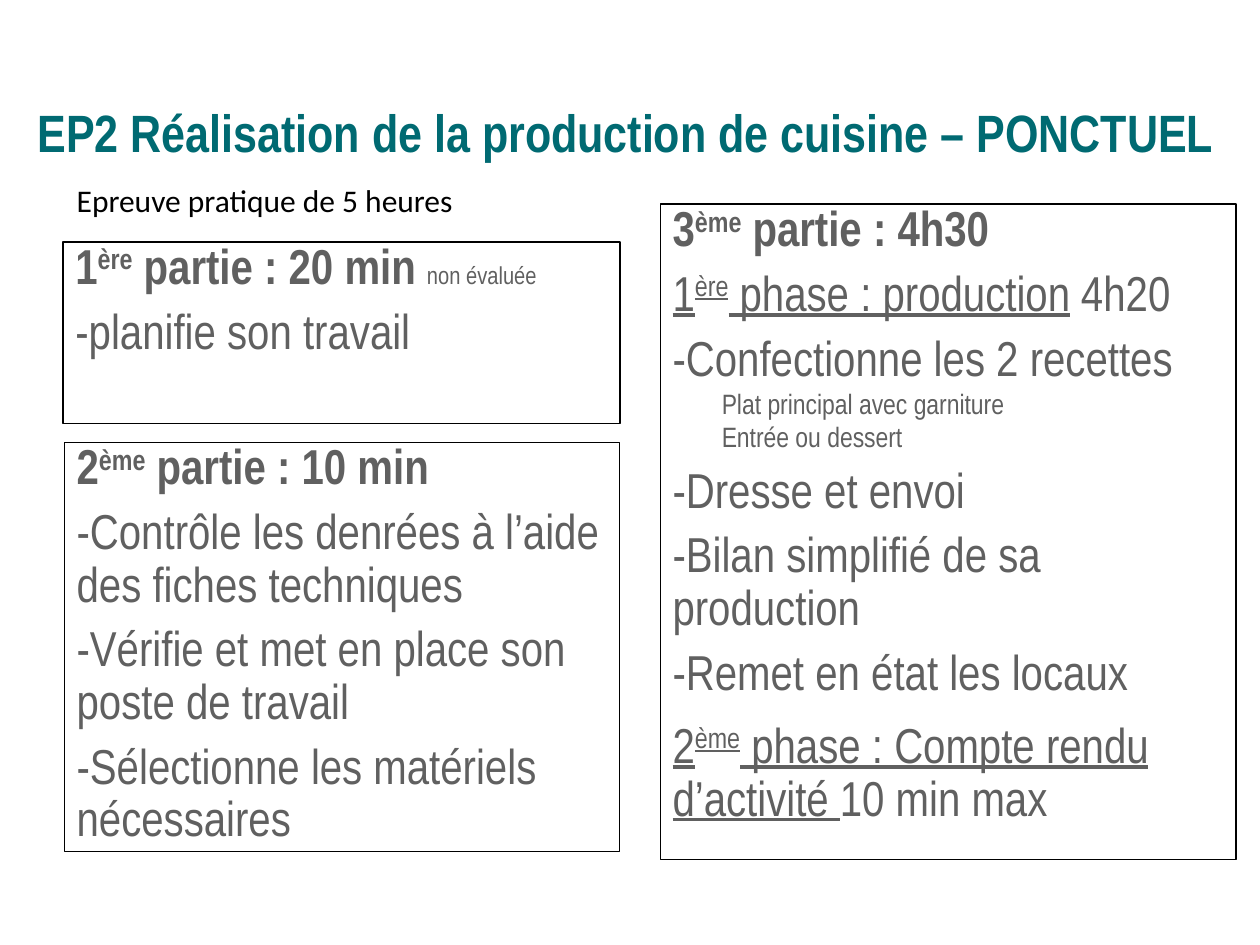
from pptx import Presentation
from pptx.dml.color import RGBColor
from pptx.enum.shapes import MSO_SHAPE
from pptx.enum.text import MSO_ANCHOR, PP_ALIGN
from pptx.util import Inches, Pt

THEME = {
    "heading": RGBColor(0x00, 0x6A, 0x72),
    "body": RGBColor(0x60, 0x60, 0x60),
    "black": RGBColor(0x00, 0x00, 0x00),
    "narrow": "Arial Narrow",
    "plain": "Calibri",
    "title_size": 30,
    "body_size": 28,
    "intro_size": 18,
    "detail_size": 16,
    "note_size": 14,
}

TITLE = "EP2 Réalisation de la production de cuisine – PONCTUEL"
INTRO = "Epreuve pratique de 5 heures"


def ordinal(number, suffix, rest, **style):
    return [(number, style), (suffix, {**style, "raised": True}), (rest, style)]


def line(text):
    return {"runs": [(text, {})]}


def part(number, suffix, rest):
    return {"runs": ordinal(number, suffix, rest, bold=True)}


def phase(number, suffix, rest, duration, before=7):
    runs = ordinal(number, suffix, rest, underline=True) + [(duration, {})]
    return {"runs": runs, "before": before}


def detail(text):
    return {"runs": [(text, {"size": THEME["detail_size"]})],
            "before": 0, "spacing": None, "indent": 0.39}


planning = part("1", "ère", " partie : 20 min ")
planning["runs"].append(("non évaluée", {"size": THEME["note_size"]}))

PARTS = [
    ((0.5, 1.92, 4.42, 1.44), [
        planning,
        line("-planifie son travail"),
    ]),
    ((0.51, 3.51, 4.41, 3.25), [
        part("2", "ème", " partie : 10 min"),
        line("-Contrôle les denrées à l’aide des fiches techniques"),
        line("-Vérifie et met en place son poste de travail"),
        line("-Sélectionne les matériels nécessaires"),
    ]),
    ((5.24, 1.62, 4.57, 5.2), [
        part("3", "ème", " partie : 4h30"),
        phase("1", "ère", " phase : production", " 4h20"),
        line("-Confectionne les 2 recettes"),
        detail("Plat principal avec garniture"),
        detail("Entrée ou dessert"),
        line("-Dresse et envoi"),
        line("-Bilan simplifié de sa production"),
        line("-Remet en état les locaux"),
        phase("2", "ème", " phase : Compte rendu d’activité ", "10 min max", 12),
    ]),
]


def add_run(paragraph, text, size=THEME["body_size"], face=THEME["narrow"],
            color=THEME["body"], bold=False, underline=False, raised=False):
    run = paragraph.add_run()
    run.text = text
    run.font.size = Pt(size)
    run.font.name = face
    run.font.color.rgb = color
    run.font.bold = bold
    run.font.underline = underline
    if raised:
        run.font._element.set("baseline", "30000")


def set_frame(frame, anchor):
    frame.word_wrap = True
    frame.vertical_anchor = anchor
    frame.margin_left = frame.margin_right = Inches(0.1)
    frame.margin_top = frame.margin_bottom = 0


def add_part(slide, place, content):
    box = slide.shapes.add_shape(MSO_SHAPE.RECTANGLE, *map(Inches, place))
    box.shadow.inherit = False
    box.fill.background()
    box.line.color.rgb = THEME["black"]
    box.line.width = Pt(0.75)
    frame = box.text_frame
    set_frame(frame, MSO_ANCHOR.TOP)
    for index, entry in enumerate(content):
        paragraph = frame.add_paragraph() if index else frame.paragraphs[0]
        paragraph.alignment = PP_ALIGN.LEFT
        paragraph.space_before = Pt(entry.get("before", 7) if index else 0)
        spacing = entry.get("spacing", 30)
        if spacing:
            paragraph.line_spacing = Pt(spacing)
        if "indent" in entry:
            properties = paragraph._p.get_or_add_pPr()
            properties.set("marL", "0")
            properties.set("indent", str(Inches(entry["indent"])))
        for text, style in entry["runs"]:
            add_run(paragraph, text, **style)


def main():
    deck = Presentation()
    deck.slide_width, deck.slide_height = Inches(10), Inches(7.5)
    slide = deck.slides.add_slide(deck.slide_layouts[6])

    title = slide.shapes.add_textbox(*map(Inches, (0.2, 0.5, 9.61, 1.13))).text_frame
    set_frame(title, MSO_ANCHOR.MIDDLE)
    title.paragraphs[0].line_spacing = Pt(33)
    add_run(title.paragraphs[0], TITLE, THEME["title_size"],
            color=THEME["heading"], bold=True)

    for place, content in PARTS:
        add_part(slide, place, content)

    intro = slide.shapes.add_textbox(*map(Inches, (0.51, 1.39, 4.25, 0.4))).text_frame
    intro.word_wrap = True
    add_run(intro.paragraphs[0], INTRO, THEME["intro_size"],
            THEME["plain"], THEME["black"])

    deck.save("out.pptx")


if __name__ == "__main__":
    main()
